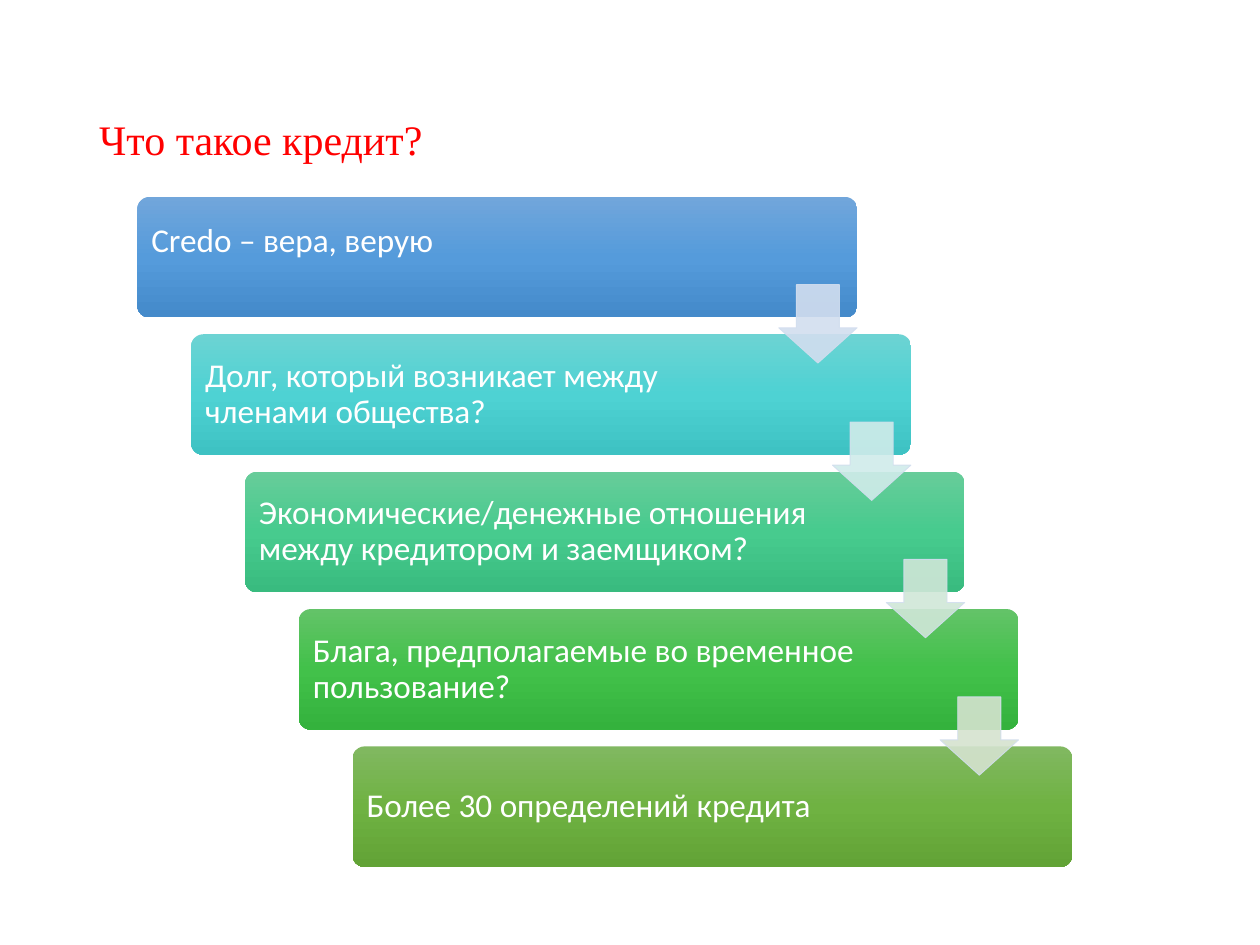
from copy import deepcopy

from lxml.etree import SubElement
from pptx import Presentation
from pptx.dml.color import RGBColor
from pptx.enum.shapes import MSO_SHAPE
from pptx.enum.text import MSO_ANCHOR, PP_ALIGN
from pptx.oxml.ns import qn
from pptx.util import Pt

STEPS = [
    ("Credo – вера, верую", ("71A6DB", "559BDB", "448ACA")),
    ("Долг, который возникает между членами общества?", ("6CD3D3", "4ED2D3", "3EC2C3")),
    ("Экономические/денежные отношения между кредитором и заемщиком?",
     ("67CC9A", "47CB8E", "39BB7F")),
    ("Блага, предполагаемые во временное пользование?", ("63C368", "42C14A", "34B23D")),
    ("Более 30 определений кредита", ("81B861", "6FB242", "62A336")),
]
ARROW_COLORS = ["D2DEEF", "D0ECEA", "D0E7D8", "D5E3CF"]
ARROW_LINE = "D2DEEF"

STEP_LEFT, STEP_TOP = 78.5, 112.5
STEP_WIDTH, STEP_HEIGHT = 411.3, 68.9
SHIFT_X, SHIFT_Y = 30.75, 78.5
ARROW_SIZE = 44.8
ARROW_OVERLAP = 18.7  # how far an arrow starts above the bottom of its step
FIRST_STEP_LIFT = 18  # extra bottom inset that raises the first step's text


def color(hex_string):
    return RGBColor.from_string(hex_string)


def set_all(target, values):
    for attribute, value in values.items():
        setattr(target, attribute, value)


def set_opacity(fill_parent, percent):
    """Make the solid fill inside the given XML element translucent."""
    rgb = fill_parent.find(qn("a:solidFill")).find(qn("a:srgbClr"))
    SubElement(rgb, qn("a:alpha"), val=str(percent * 1000))


class CascadeSlide:
    title_font = {"name": "Times New Roman", "size": Pt(24)}
    step_font = {"name": "Calibri", "size": Pt(19)}
    paragraph = {"alignment": PP_ALIGN.LEFT, "line_spacing": 0.9}
    step_frame = {"word_wrap": True, "vertical_anchor": MSO_ANCHOR.MIDDLE,
                  "margin_left": Pt(6), "margin_right": Pt(81),
                  "margin_top": Pt(6), "margin_bottom": Pt(6)}

    def __init__(self, presentation):
        self.slide = presentation.slides.add_slide(presentation.slide_layouts[5])

    def fill_text(self, frame, text, font, hex_string):
        paragraph = frame.paragraphs[0]
        set_all(paragraph, self.paragraph)
        run = paragraph.add_run()
        run.text = text
        set_all(run.font, font)
        run.font.color.rgb = color(hex_string)

    def title(self, text, left, top, width, height):
        title = self.slide.shapes.title
        set_all(title, {"left": Pt(left), "top": Pt(top),
                        "width": Pt(width), "height": Pt(height)})
        title.text_frame.vertical_anchor = MSO_ANCHOR.MIDDLE
        self.fill_text(title.text_frame, text, self.title_font, "FF0000")

    def preset(self, kind, left, top, width, height, adjustments):
        shape = self.slide.shapes.add_shape(kind, Pt(left), Pt(top), Pt(width), Pt(height))
        shape.shadow.inherit = False
        for index, value in enumerate(adjustments):
            shape.adjustments[index] = value
        return shape

    def step(self, text, gradient, left, top, lift=0):
        box = self.preset(MSO_SHAPE.ROUNDED_RECTANGLE, left, top,
                          STEP_WIDTH, STEP_HEIGHT, [0.1])
        box.line.fill.background()
        box.fill.gradient()
        box.fill.gradient_angle = 270
        stop_list = next(box._element.spPr.iter(qn("a:gsLst")))
        stop_list.insert(1, deepcopy(stop_list[0]))
        for stop, position, shade in zip(box.fill.gradient_stops, (0, 0.5, 1), gradient):
            stop.position = position
            stop.color.rgb = color(shade)
        set_all(box.text_frame, self.step_frame)
        box.text_frame.margin_bottom += Pt(lift)
        self.fill_text(box.text_frame, text, self.step_font, "FFFFFF")

    def arrow(self, hex_string, left, top):
        arrow = self.preset(MSO_SHAPE.DOWN_ARROW, left, top,
                            ARROW_SIZE, ARROW_SIZE, [0.55, 0.45])
        arrow.fill.solid()
        arrow.fill.fore_color.rgb = color(hex_string)
        arrow.line.color.rgb = color(ARROW_LINE)
        arrow.line.width = Pt(0.5)
        properties = arrow._element.spPr
        for fill_parent in (properties, properties.find(qn("a:ln"))):
            set_opacity(fill_parent, 90)


def main():
    presentation = Presentation()
    set_all(presentation, {"slide_width": Pt(720), "slide_height": Pt(540)})
    cascade = CascadeSlide(presentation)
    cascade.title("Что такое кредит?", 49.5, 28.75, 621, 104.4)

    for index, (text, gradient) in enumerate(STEPS):
        cascade.step(text, gradient, STEP_LEFT + index * SHIFT_X, STEP_TOP + index * SHIFT_Y,
                     lift=0 if index else FIRST_STEP_LIFT)

    arrow_left = STEP_LEFT + STEP_WIDTH - ARROW_SIZE
    arrow_top = STEP_TOP + STEP_HEIGHT - ARROW_OVERLAP
    for index, shade in enumerate(ARROW_COLORS):
        cascade.arrow(shade, arrow_left + index * SHIFT_X, arrow_top + index * SHIFT_Y)

    presentation.save("out.pptx")


if __name__ == "__main__":
    main()
